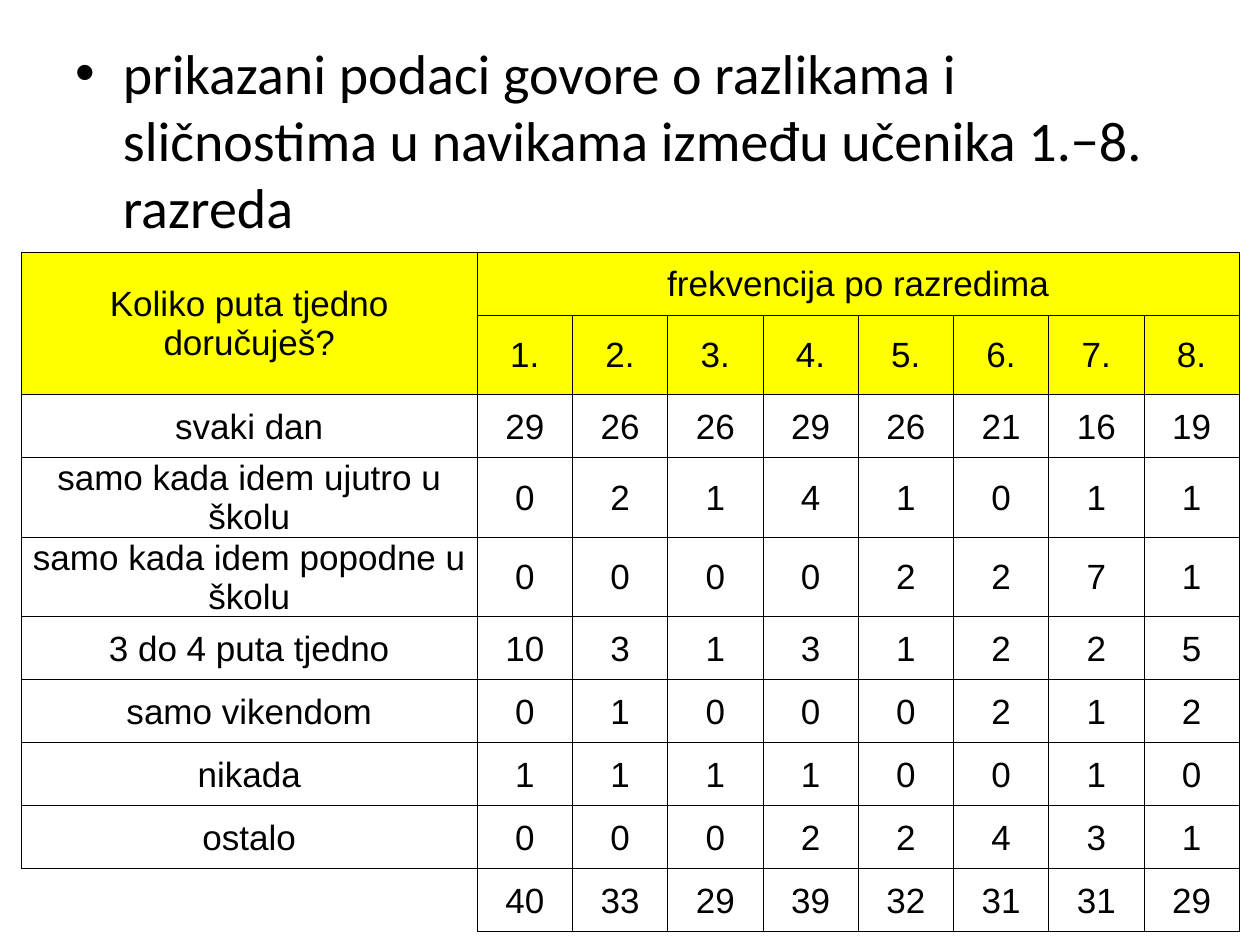
from lxml.etree import SubElement
from pptx import Presentation
from pptx.dml.color import RGBColor
from pptx.enum.text import MSO_ANCHOR, PP_ALIGN
from pptx.oxml.ns import qn
from pptx.util import Cm, Pt

THEME = {
    "text": RGBColor(0, 0, 0),
    "header": RGBColor(255, 255, 0),
    "border": "000000",
    "border_width": Pt(0.5),
    "body_font": {"name": "Calibri", "size": Pt(32)},
    "table_font": {"name": "Arial", "size": Pt(20), "bold": False},
}
CELL_FORMAT = {
    "vertical_anchor": MSO_ANCHOR.MIDDLE,
    "margin_left": Cm(0.03),
    "margin_right": Cm(0.03),
    "margin_top": Cm(0.03),
    "margin_bottom": Cm(0),
}
ROWS = [
    ["Koliko puta tjedno doručuješ?", "frekvencija po razredima"] + [""] * 7,
    [""] + [f"{grade}." for grade in range(1, 9)],
    ["svaki dan", 29, 26, 26, 29, 26, 21, 16, 19],
    ["samo kada idem ujutro u školu", 0, 2, 1, 4, 1, 0, 1, 1],
    ["samo kada idem popodne u školu", 0, 0, 0, 0, 2, 2, 7, 1],
    ["3 do 4 puta tjedno", 10, 3, 1, 3, 1, 2, 2, 5],
    ["samo vikendom", 0, 1, 0, 0, 0, 2, 1, 2],
    ["nikada", 1, 1, 1, 1, 0, 0, 1, 0],
    ["ostalo", 0, 0, 0, 2, 2, 4, 3, 1],
    ["", 40, 33, 29, 39, 32, 31, 31, 29],
]


def set_format(obj, values):
    for name, value in values.items():
        setattr(obj, name, value)


def set_borders(cell, visible):
    tcPr = cell._tc.get_or_add_tcPr()
    for side in "LRTB":
        ln = SubElement(tcPr, qn(f"a:ln{side}"), w=str(THEME["border_width"]))
        if side in visible:
            fill = SubElement(ln, qn("a:solidFill"))
            SubElement(fill, qn("a:srgbClr"), val=THEME["border"])
        else:
            SubElement(ln, qn("a:noFill"))


prs = Presentation()
prs.slide_width, prs.slide_height = Cm(25.4), Cm(19.05)
s = prs.slides.add_slide(prs.slide_layouts[1])
title = s.shapes.title.element
title.getparent().remove(title)

body = s.placeholders[1]
set_format(body, {"left": Cm(1.27), "top": Cm(0.64), "width": Cm(22.86), "height": Cm(12.57)})
r = body.text_frame.paragraphs[0].add_run()
r.text = "prikazani podaci govore o razlikama i sličnostima u navikama između učenika 1.−8. razreda"
set_format(r.font, THEME["body_font"])
r.font.color.rgb = THEME["text"]

label_width, grade_width, row_height = Cm(9.19), Cm(1.92), Cm(1.27)
tbl = s.shapes.add_table(
    len(ROWS), len(ROWS[0]), Cm(0.43), Cm(5.08),
    label_width + 8 * grade_width, row_height * len(ROWS),
).table
set_format(tbl, {"first_row": False, "horz_banding": False})
for i, col in enumerate(tbl.columns):
    col.width = grade_width if i else label_width

for i, row in enumerate(ROWS):
    tbl.rows[i].height = row_height
    for j, value in enumerate(row):
        cell = tbl.cell(i, j)
        set_format(cell, CELL_FORMAT)
        is_corner = i == len(ROWS) - 1 and j == 0
        set_borders(cell, "RT" if is_corner else "LRTB")
        if i < 2:
            cell.fill.solid()
            cell.fill.fore_color.rgb = THEME["header"]
        else:
            cell.fill.background()
        if value != "":
            p = cell.text_frame.paragraphs[0]
            p.alignment = PP_ALIGN.CENTER
            r = p.add_run()
            r.text = str(value)
            set_format(r.font, THEME["table_font"])
            r.font.color.rgb = THEME["text"]

tbl.cell(0, 0).merge(tbl.cell(1, 0))
tbl.cell(0, 1).merge(tbl.cell(0, 8))

prs.save("out.pptx")
